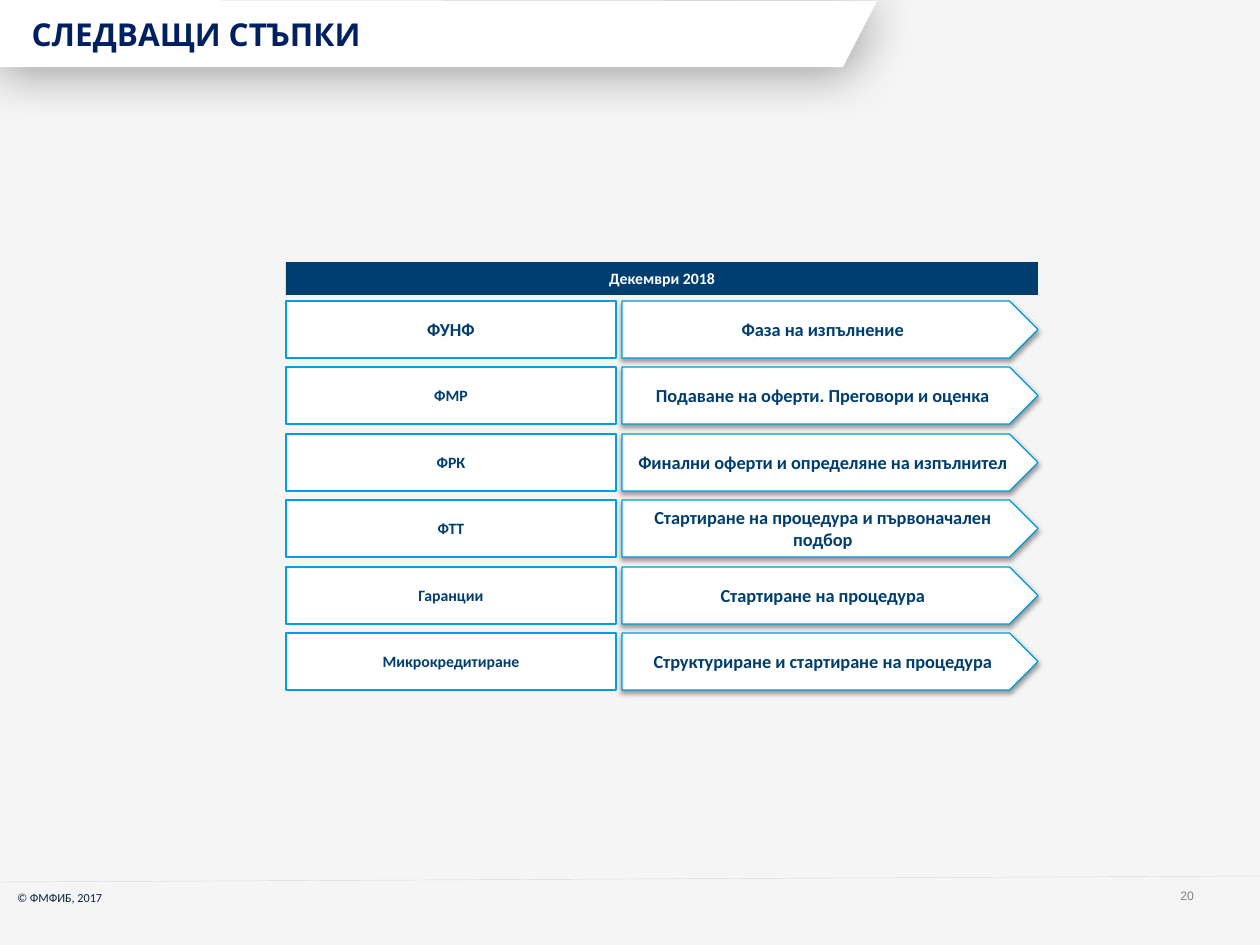
from lxml import etree
from pptx import Presentation, util as u
from pptx.dml.color import RGBColor
from pptx.enum import shapes, text
from pptx.oxml.ns import qn

SCALE = 914400 / 126  # EMU per px
NAVY = "003E6F"
STEPS = [
    ("ФУНФ", 10.5, "Фаза на изпълнение"),
    ("ФМР", 9, "Подаване на оферти. Преговори и оценка"),
    ("ФРК", 9, "Финални оферти и определяне на изпълнител"),
    ("ФТТ", 9, "Стартиране на процедура и първоначален подбор"),
    ("Гаранции", 9, "Стартиране на процедура"),
    ("Микрокредитиране", 9, "Структуриране и стартиране на процедура"),
]


def px(n):
    return u.Emu(round(n * SCALE))


def rgb(color):
    return RGBColor.from_string(color)


def set_text(sp, words, size, font, color, bold=False, align=None,
             anchor=text.MSO_ANCHOR.TOP, inset=None):
    tf = sp.text_frame
    tf.word_wrap = True
    tf.vertical_anchor = anchor
    if inset is not None:
        tf.margin_left = tf.margin_right = tf.margin_top = tf.margin_bottom = px(inset)
    p = tf.paragraphs[0]
    p.text = words
    p.alignment = align
    p.font.size, p.font.name, p.font.bold = u.Pt(size), font, bold
    p.font.color.rgb = rgb(color)


def set_shadow(sp, opacity, blur, distance):
    effects = sp._element.spPr.get_or_add_effectLst() if hasattr(
        sp._element.spPr, "get_or_add_effectLst") else etree.SubElement(
        sp._element.spPr, qn("a:effectLst"))
    shadow = etree.SubElement(
        effects, qn("a:outerShdw"), blurRad=str(u.Pt(blur)), dist=str(u.Pt(distance)),
        dir="5400000", algn="t", rotWithShape="0")
    color = etree.SubElement(shadow, qn("a:srgbClr"), val="000000")
    etree.SubElement(color, qn("a:alpha"), val=str(opacity * 1000))


def add_block(s, kind, x, y, w, h, words, size, color, fill, line=None, inset=None):
    sp = s.shapes.add_shape(kind, px(x), px(y), px(w), px(h))
    sp.shadow.inherit = False
    sp.fill.solid()
    sp.fill.fore_color.rgb = rgb(fill)
    if line:
        sp.line.color.rgb = rgb(line)
        sp.line.width = u.Pt(0.75)
    else:
        sp.line.fill.background()
    set_text(sp, words, size, "Calibri", color, True, text.PP_ALIGN.CENTER,
             text.MSO_ANCHOR.MIDDLE, inset)
    return sp


def add_title(s, x, y, w, h):
    # Slanted banner with a soft shadow
    builder = s.shapes.build_freeform(x, y + h, scale=SCALE)
    builder.add_line_segments([(x, y), (x + w, y + 1), (x + w - 34, y + h)])
    banner = builder.convert_to_shape()
    banner.shadow.inherit = False
    banner.fill.solid()
    banner.fill.fore_color.rgb = rgb("FFFFFF")
    banner.line.fill.background()
    set_shadow(banner, 34, 28, 4)
    # Title placeholder, brought in front of the banner
    title = s.shapes.title
    title.left, title.top, title.width, title.height = px(x + 19), px(y + 9), px(863), px(44)
    set_text(title, "СЛЕДВАЩИ СТЪПКИ", 18, "Karla", "002060", True, text.PP_ALIGN.LEFT)
    title.text_frame.auto_size = text.MSO_AUTO_SIZE.NONE
    s.shapes._spTree.append(title._element)


def add_steps(s, x, y, w):
    label_w, gap, row_h = 330, 6, 57
    rect, arrow = shapes.MSO_SHAPE.RECTANGLE, shapes.MSO_SHAPE.PENTAGON
    add_block(s, rect, x, y, w, 33, "Декември 2018", 9, "FFFFFF", NAVY, inset=0)
    for i, (label, size, step) in enumerate(STEPS):
        top = y + 39 + i * 133 // 2
        add_block(s, rect, x, top, label_w, row_h, label, size, NAVY,
                  "FFFFFF", "009EE5", inset=0)
        left = label_w + gap
        sp = add_block(s, arrow, x + left, top, w - left, row_h, step, 10.5, NAVY,
                       "FFFFFF", "009BD5")
        set_shadow(sp, 38, 3.1, 1.6)


def add_footer(s, x, y, w):
    rule = s.shapes.add_connector(shapes.MSO_CONNECTOR.STRAIGHT,
                                  px(x), px(y + 6), px(x + w), px(y))
    rule.line.color.rgb = rgb("D9D9D9")
    rule.line.width = u.Pt(0.25)
    etree.SubElement(rule._element.spPr, qn("a:effectLst"))
    owner = s.shapes.add_textbox(px(x + 17), px(y + 14), px(193), px(15))
    set_text(owner, "© ФМФИБ, 2017", 7, "Calibri", "0F243E", inset=0)
    number = s.shapes.add_textbox(px(x + w - 92), px(y + 6), px(49), px(38))
    set_text(number, "20", 7, "Arial", "808080")


def main():
    prs = Presentation()
    prs.slide_width, prs.slide_height = px(1260), px(945)
    s = prs.slides.add_slide(prs.slide_layouts[5])
    s.background.fill.solid()
    s.background.fill.fore_color.rgb = rgb("F5F5F5")
    add_footer(s, 0, 876, 1260)
    add_title(s, 0, 0, 877, 67)
    add_steps(s, 286, 262, 752)
    prs.save("out.pptx")


if __name__ == "__main__":
    main()
